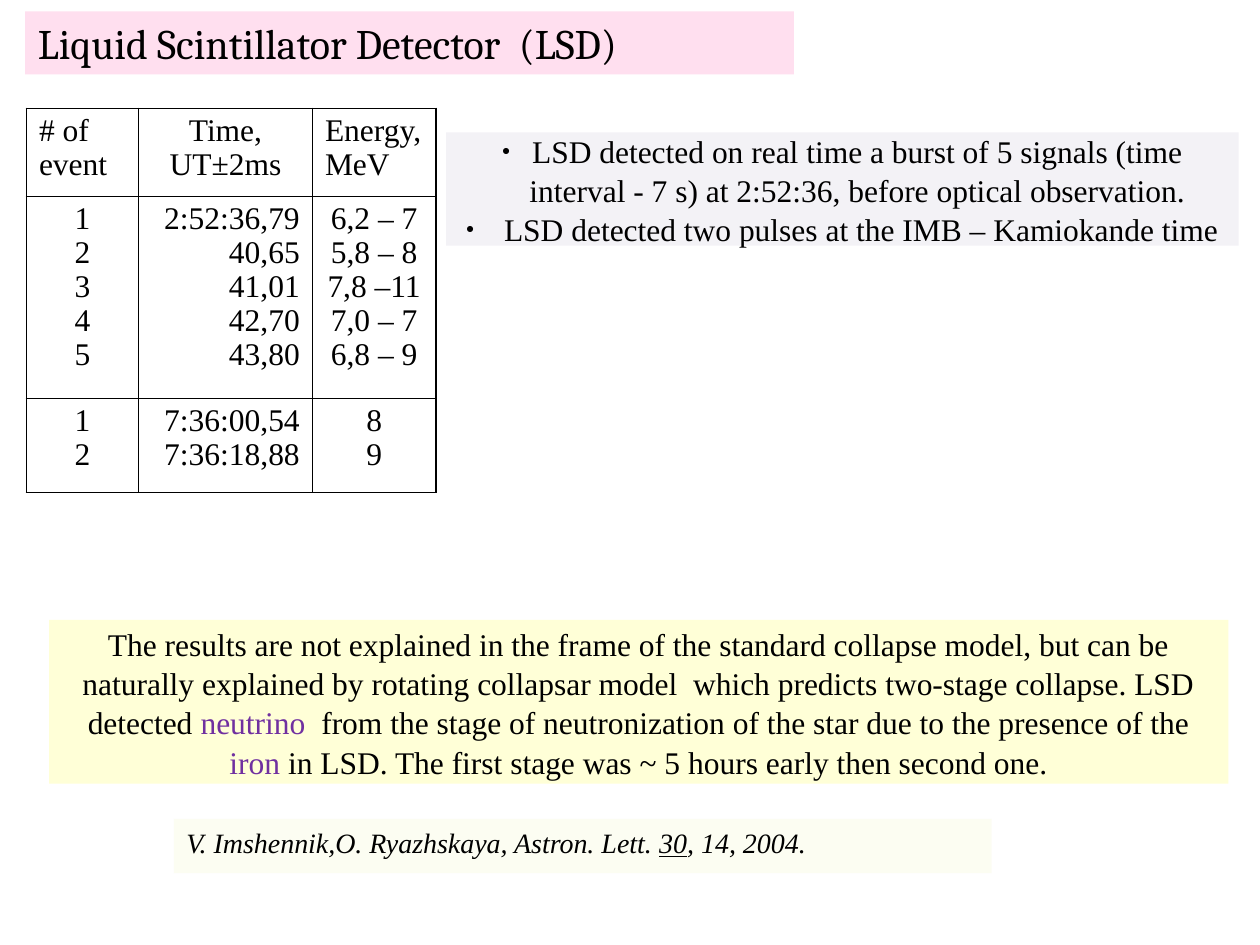
from lxml.etree import SubElement
from pptx import Presentation
from pptx.dml.color import RGBColor
from pptx.enum.shapes import MSO_SHAPE
from pptx.enum.text import MSO_ANCHOR, PP_ALIGN
from pptx.oxml import parse_xml
from pptx.oxml.ns import nsdecls, qn
from pptx.util import Inches, Pt

COLORS = {
    "text": "000000", "accent": "7030A0", "white": "FFFFFF",
    "title": "FF99CC", "findings": "8E86AE",
    "conclusion": "FFFFD7", "citation": "F6F9D4",
}
SERIF = "Times New Roman"
LEFT, CENTER, RIGHT = PP_ALIGN.LEFT, PP_ALIGN.CENTER, PP_ALIGN.RIGHT


def style_box(box, bounds, fill, opacity, anchor, margin=0.05):
    """Place a box, fill it and set up its text frame."""
    box.left, box.top, box.width, box.height = map(Inches, bounds)
    box.fill.solid()
    box.fill.fore_color.rgb = RGBColor.from_string(COLORS[fill])
    if opacity < 100:
        color = box.fill._xPr.find(qn("a:solidFill"))[0]
        SubElement(color, qn("a:alpha"), val=str(opacity * 1000))
    box.line.fill.background()
    frame = box.text_frame
    frame.word_wrap = True
    frame.vertical_anchor = anchor
    frame.margin_left = frame.margin_right = Inches(0.1)
    frame.margin_top = frame.margin_bottom = Inches(margin)


def style_text(para, align, size=18, font=SERIF, spacing=None):
    """Align a paragraph and format all its runs."""
    para.alignment = align
    para.space_before = Pt(0)
    if spacing:
        para.line_spacing = spacing
    for span in para.runs:
        span.font.name = font
        span.font.size = Pt(size)
        span.font.color.rgb = RGBColor.from_string(COLORS["text"])


deck = Presentation()
deck.slide_width, deck.slide_height = Inches(10), Inches(7.5)
page = deck.slides.add_slide(deck.slide_layouts[1])

# Title
title = page.shapes.title
style_box(title, (0.2, 0.09, 6.1, 0.5), "title", 31, MSO_ANCHOR.TOP)
title.text_frame.text = "Liquid Scintillator Detector  (LSD)"
style_text(title.text_frame.paragraphs[0], LEFT, 24, "Cambria")

# Findings list
findings = page.placeholders[1]
style_box(findings, (3.54, 1.05, 6.29, 0.9), "findings", 10, MSO_ANCHOR.MIDDLE, 0)
findings.text_frame.text = (
    "LSD detected on real time a burst of 5 signals (time interval - 7 s) "
    "at 2:52:36, before optical observation.\n"
    " LSD detected two pulses at the IMB – Kamiokande time"
)
for para in findings.text_frame.paragraphs:
    props = para._p.get_or_add_pPr()
    props.set("marL", str(Inches(0.24)))
    props.set("indent", str(-Inches(0.24)))
    SubElement(props, qn("a:buSzPct"), val="45000")
    SubElement(props, qn("a:buChar"), char="●")
    style_text(para, CENTER, spacing=1.04)

# Event table
rows = [
    ("# of event", "Time, UT±2ms", "Energy,MeV"),
    ("1\n2\n3\n4\n5", "2:52:36,79\n40,65\n41,01\n42,70\n43,80",
     "6,2 – 7\n5,8 – 8\n7,8 –11\n7,0 – 7\n6,8 – 9"),
    ("1\n2", "7:36:00,54\n7:36:18,88", "8\n9"),
]
header_aligns, body_aligns = (LEFT, CENTER, LEFT), (CENTER, RIGHT, CENTER)
last = 2
events = page.shapes.add_table(
    3, 3, Inches(0.21), Inches(0.86), Inches(3.25), Inches(3.05)).table
for column, width in zip(events.columns, (0.89, 1.38, 0.98)):
    column.width = Inches(width)
for row, height in zip(events.rows, (0.7, 1.6, 0.75)):
    row.height = Inches(height)
for r, texts in enumerate(rows):
    aligns = body_aligns if r else header_aligns
    for c, (text, align) in enumerate(zip(texts, aligns)):
        cell = events.cell(r, c)
        cell.text_frame.text = text
        for para in cell.text_frame.paragraphs:
            style_text(para, align, spacing=0.97)
            para.font.bold = False
        # Outer edges are heavier than inner ones
        outer = {"L": c == 0, "R": c == last, "T": r == 0, "B": r == last}
        for side, heavy in outer.items():
            width = Pt(0.96 if heavy else 0.45)
            cell._tc.get_or_add_tcPr().append(parse_xml(
                f'<a:ln{side} {nsdecls("a")} w="{width}"><a:solidFill>'
                f'<a:srgbClr val="{COLORS["text"]}"/></a:solidFill></a:ln{side}>'))
        cell.fill.solid()
        cell.fill.fore_color.rgb = RGBColor.from_string(COLORS["white"])

# Conclusion and citation, as (text, style) spans
notes = [
    ((0.39, 4.92, 9.36, 1.3), "conclusion", 100, MSO_ANCHOR.MIDDLE, CENTER, 18, 1.04, [
        ("The results are not explained in the frame of the standard collapse "
         "model, but can be naturally explained by rotating collapsar model  "
         "which predicts two-stage collapse. LSD detected ", ""),
        ("neutrino  ", "accent"),
        ("from the stage of neutronization of the star due to the presence "
         "of the ", ""),
        ("iron ", "accent"),
        ("in LSD. The first stage was ~ 5 hours early then second one.", "")]),
    ((1.38, 6.5, 6.49, 0.43), "citation", 29, MSO_ANCHOR.TOP, LEFT, 16, None, [
        ("V. Imshennik,O. Ryazhskaya, Astron. Lett. ", "italic"),
        ("30", "italic underline"),
        (", 14, 2004.", "italic")]),
]
for bounds, fill, opacity, anchor, align, size, spacing, spans in notes:
    box = page.shapes.add_shape(MSO_SHAPE.RECTANGLE, *map(Inches, bounds))
    box.shadow.inherit = False
    style_box(box, bounds, fill, opacity, anchor)
    para = box.text_frame.paragraphs[0]
    for text, _ in spans:
        para.add_run().text = text
    style_text(para, align, size, spacing=spacing)
    for span, (_, style) in zip(para.runs, spans):
        if style == "accent":
            span.font.color.rgb = RGBColor.from_string(COLORS["accent"])
        if "italic" in style:
            span.font.italic = True
        if "underline" in style:
            span.font.underline = True

deck.save("out.pptx")
